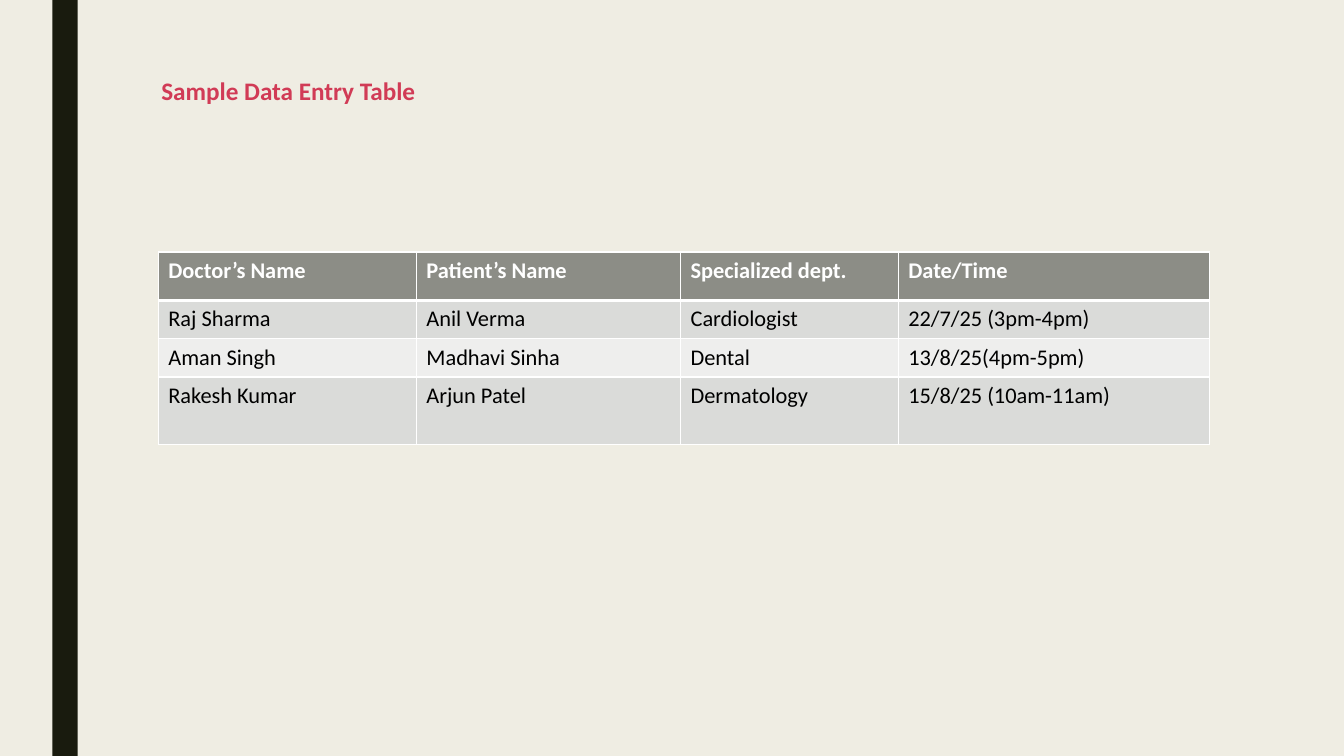
"""Builds the slide with the sample data entry table."""
from lxml.etree import SubElement
from pptx import Presentation
from pptx.dml.color import RGBColor
from pptx.enum.shapes import MSO_SHAPE
from pptx.enum.text import MSO_ANCHOR, PP_ALIGN
from pptx.oxml.ns import qn
from pptx.util import Inches, Pt

TITLE = "Sample Data Entry Table"
ROWS = [
    ("Doctor’s Name", "Patient’s Name", "Specialized dept.", "Date/Time"),
    ("Raj Sharma", "Anil Verma", "Cardiologist", "22/7/25 (3pm-4pm)"),
    ("Aman Singh", "Madhavi Sinha", "Dental", "13/8/25(4pm-5pm)"),
    ("Rakesh Kumar", "Arjun Patel", "Dermatology", "15/8/25 (10am-11am)"),
]
COL_WIDTHS = [2.56, 2.62, 2.16, 3.09]
ROW_HEIGHTS = [0.48, 0.38, 0.38, 0.67]
FONT = "Calibri"
COLORS = {
    "background": "EFEDE3", "bar": "191B0E", "title": "D13B56",
    "header": "8C8D86", "odd": "DADBD9", "even": "EEEEED",
    "white": "FFFFFF", "black": "000000",
}


def color(name):
    """Return the named colour."""
    return RGBColor.from_string(COLORS[name])


def style_run(r, size, name, bold):
    """Format one run of text."""
    r.font.name = FONT
    r.font.size = Pt(size)
    r.font.bold = bold
    r.font.color.rgb = color(name)


def add_borders(cell, widths):
    """Draw white borders with a width in points for each side."""
    tc_pr = cell._tc.get_or_add_tcPr()
    for side, width in widths.items():
        ln = SubElement(tc_pr, qn(f"a:ln{side}"), w=str(Pt(width)))
        fill = SubElement(ln, qn("a:solidFill"))
        SubElement(fill, qn("a:srgbClr"), val=COLORS["white"])


def add_bar(slide):
    """Add the dark vertical bar."""
    sp = slide.shapes.add_shape(
        MSO_SHAPE.RECTANGLE, Inches(0.52), 0, Inches(0.25), Inches(7.5))
    sp.shadow.inherit = False
    sp.fill.solid()
    sp.fill.fore_color.rgb = color("bar")
    sp.line.fill.background()


def set_title(slide):
    """Place and format the title."""
    sp = slide.shapes.title
    sp.left, sp.top = Inches(1.5), Inches(0.75)
    sp.width, sp.height = Inches(10.5), Inches(0.33)
    tf = sp.text_frame
    tf.text = TITLE
    tf.vertical_anchor = MSO_ANCHOR.MIDDLE
    p = tf.paragraphs[0]
    p.alignment = PP_ALIGN.LEFT
    p.line_spacing = 0.89
    style_run(p.runs[0], 18, "title", True)


def add_data_table(slide):
    """Add the table with a header and banded rows."""
    table = slide.shapes.add_table(
        len(ROWS), len(COL_WIDTHS), Inches(1.57), Inches(2.5),
        Inches(sum(COL_WIDTHS)), Inches(sum(ROW_HEIGHTS))).table
    for col, width in zip(table.columns, COL_WIDTHS):
        col.width = Inches(width)
    for i, (row, height, texts) in enumerate(zip(table.rows, ROW_HEIGHTS, ROWS)):
        row.height = Inches(height)
        is_header = i == 0
        band = "header" if is_header else "odd" if i % 2 else "even"
        borders = {"L": 1, "R": 1, "T": 3 if i == 1 else 1, "B": 3 if is_header else 1}
        for cell, text in zip(row.cells, texts):
            add_borders(cell, borders)
            cell.fill.solid()
            cell.fill.fore_color.rgb = color(band)
            cell.text_frame.text = text
            r = cell.text_frame.paragraphs[0].runs[0]
            style_run(r, 16, "white" if is_header else "black", is_header)


def main():
    """Build and save the presentation."""
    prs = Presentation()
    prs.slide_width, prs.slide_height = Inches(13.33), Inches(7.5)
    slide = prs.slides.add_slide(prs.slide_layouts[5])
    slide.background.fill.solid()
    slide.background.fill.fore_color.rgb = color("background")
    add_bar(slide)
    set_title(slide)
    add_data_table(slide)
    prs.save("out.pptx")


if __name__ == "__main__":
    main()
